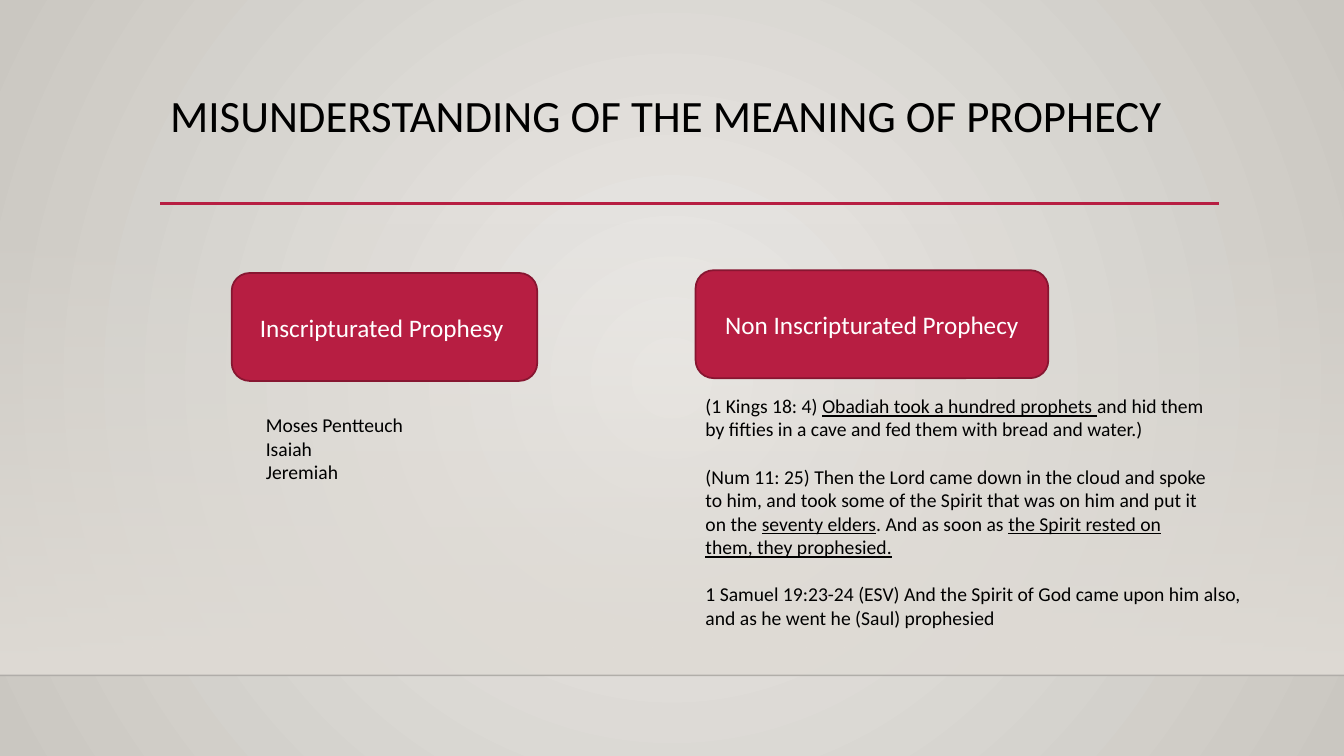
from lxml.etree import Element, SubElement
from pptx import Presentation
from pptx.dml.color import RGBColor
from pptx.enum.shapes import MSO_CONNECTOR, MSO_SHAPE
from pptx.enum.text import MSO_ANCHOR, MSO_AUTO_SIZE, PP_ALIGN
from pptx.oxml.ns import qn
from pptx.util import Cm, Pt

WIDTH, HEIGHT = 33.87, 19.05
FLOOR_TOP = 17.02
RIGHT_LEFT = 17.53


class SlideBuilder:
    font = "Calibri"
    colors = {
        "text": "000000",
        "light": "FFFFFF",
        "accent": "B71E42",
        "accent_dark": "871631",
        "edge": "000001",
        "center": "ECEAE7",
        "rim": "CAC7C1",
        "wall": "DFDBD5",
    }

    def __init__(self, presentation):
        self.slide = presentation.slides.add_slide(presentation.slide_layouts[6])

    def color(self, name):
        return RGBColor.from_string(self.colors[name])

    def fill_stops(self, gradient, stops):
        """Replace the gradient's content with (position, color, alpha) stops."""
        for child in list(gradient):
            gradient.remove(child)
        stop_list = SubElement(gradient, qn("a:gsLst"))
        for position, name, alpha in stops:
            stop = SubElement(stop_list, qn("a:gs"), pos=str(position * 1000))
            color = SubElement(stop, qn("a:srgbClr"), val=self.colors[name])
            if alpha < 100:
                SubElement(color, qn("a:alpha"), val=str(alpha * 1000))

    def radial_background(self, center, rim):
        background = Element(qn("p:bg"))
        properties = SubElement(background, qn("p:bgPr"))
        gradient = SubElement(properties, qn("a:gradFill"), rotWithShape="1")
        self.fill_stops(gradient, [(0, center, 100), (100, rim, 100)])
        circle = SubElement(gradient, qn("a:path"), path="circle")
        SubElement(circle, qn("a:fillToRect"), **dict.fromkeys("ltrb", "50000"))
        SubElement(properties, qn("a:effectLst"))
        self.slide.element.cSld.insert(0, background)

    def shape(self, kind, left, top, width, height):
        shape = self.slide.shapes.add_shape(kind, Cm(left), Cm(top), Cm(width), Cm(height))
        shape.shadow.inherit = False
        return shape

    def fading_panel(self, left, top, width, height, name):
        panel = self.shape(MSO_SHAPE.RECTANGLE, left, top, width, height)
        panel.line.fill.background()
        panel.fill.gradient()
        gradient = next(panel.element.spPr.iter(qn("a:gradFill")))
        self.fill_stops(gradient, [(0, name, 0), (100, name, 100)])
        SubElement(gradient, qn("a:lin"), ang="5400000", scaled="0")

    def horizontal_line(self, left, right, top, name, weight, alpha=100):
        line = self.slide.shapes.add_connector(
            MSO_CONNECTOR.STRAIGHT, Cm(left), Cm(top), Cm(right), Cm(top))
        line.line.color.rgb = self.color(name)
        line.line.width = Pt(weight)
        properties = line.element.spPr
        if alpha < 100:
            color = next(properties.iter(qn("a:srgbClr")))
            SubElement(color, qn("a:alpha"), val=str(alpha * 1000))
        SubElement(properties, qn("a:effectLst"))

    def add_run(self, paragraph, text, size, name, underline=False):
        run = paragraph.add_run()
        run.text = text
        run.font.name = self.font
        run.font.size = Pt(size)
        run.font.color.rgb = self.color(name)
        if underline:
            run.font.underline = True

    def heading_box(self, left, top, width, height, text):
        box = self.shape(MSO_SHAPE.ROUNDED_RECTANGLE, left, top, width, height)
        box.fill.solid()
        box.fill.fore_color.rgb = self.color("accent")
        box.line.color.rgb = self.color("accent_dark")
        box.line.width = Pt(1.25)
        box.text_frame.word_wrap = True
        box.text_frame.vertical_anchor = MSO_ANCHOR.MIDDLE
        paragraph = box.text_frame.paragraphs[0]
        paragraph.alignment = PP_ALIGN.CENTER
        self.add_run(paragraph, text, 18, "light")

    def text(self, left, top, width, height, paragraphs, size=14, gap=0, spacing=None, grow=True):
        """Each paragraph is a list of (text, underlined) runs; gap is in points."""
        box = self.slide.shapes.add_textbox(Cm(left), Cm(top), Cm(width), Cm(height))
        frame = box.text_frame
        frame.word_wrap = True
        frame.auto_size = MSO_AUTO_SIZE.SHAPE_TO_FIT_TEXT if grow else MSO_AUTO_SIZE.NONE
        for index, runs in enumerate(paragraphs):
            paragraph = frame.add_paragraph() if index else frame.paragraphs[0]
            if index and gap:
                paragraph.space_before = Pt(gap)
            if spacing:
                paragraph.line_spacing = spacing
            for content, underline in runs:
                self.add_run(paragraph, content, size, "text", underline)


def main():
    presentation = Presentation()
    presentation.slide_width, presentation.slide_height = Cm(WIDTH), Cm(HEIGHT)
    builder = SlideBuilder(presentation)

    builder.radial_background("center", "rim")
    builder.fading_panel(0, 5.61, WIDTH, FLOOR_TOP - 5.61, "wall")
    builder.horizontal_line(0, WIDTH, FLOOR_TOP, "edge", 1, alpha=20)
    builder.horizontal_line(4.04, 30.73, 5.13, "accent", 2.5)
    builder.text(4.04, 2.24, 29.11, 2.92,
                 [[("MISUNDERSTANDING OF THE MEANING OF PROPHECY", False)]],
                 size=32, spacing=0.9, grow=False)

    builder.heading_box(RIGHT_LEFT, 6.81, 8.89, 2.72, "Non Inscripturated Prophecy")
    builder.text(RIGHT_LEFT, 9.8, 13.13, 4.45, [
        [("(1 Kings 18: 4) ", False),
         ("Obadiah took a hundred prophets ", True),
         ("and hid them by fifties in a cave and fed them with bread and water.)", False)],
        [("(Num 11: 25) Then the Lord came down in the cloud and spoke to him, and took "
          "some of the Spirit that was on him and put it on the ", False),
         ("seventy elders", True),
         (". And as soon as ", False),
         ("the Spirit rested on them, they prophesied.", True)],
    ], gap=17)
    builder.text(RIGHT_LEFT, 14.55, 14.33, 1.45, [
        [("1 Samuel 19:23-24 (ESV) And the Spirit of God came upon him also, "
          "and as he went he (Saul) prophesied", False)]])

    builder.heading_box(5.84, 6.88, 7.7, 2.72, "Inscripturated Prophesy ")
    builder.text(6.45, 10.29, 6.48, 2.06,
                 [[(name, False)] for name in ("Moses Pentteuch", "Isaiah", "Jeremiah")])

    presentation.save("out.pptx")


if __name__ == "__main__":
    main()
